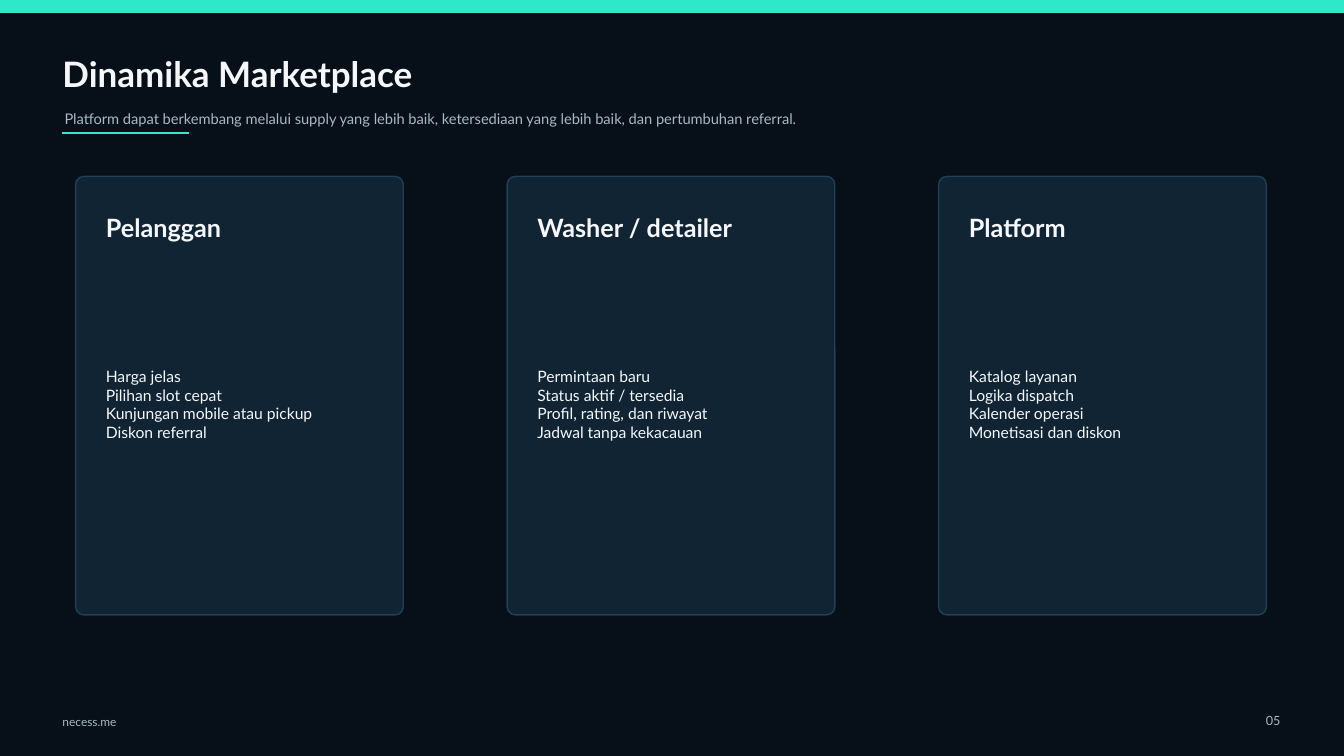
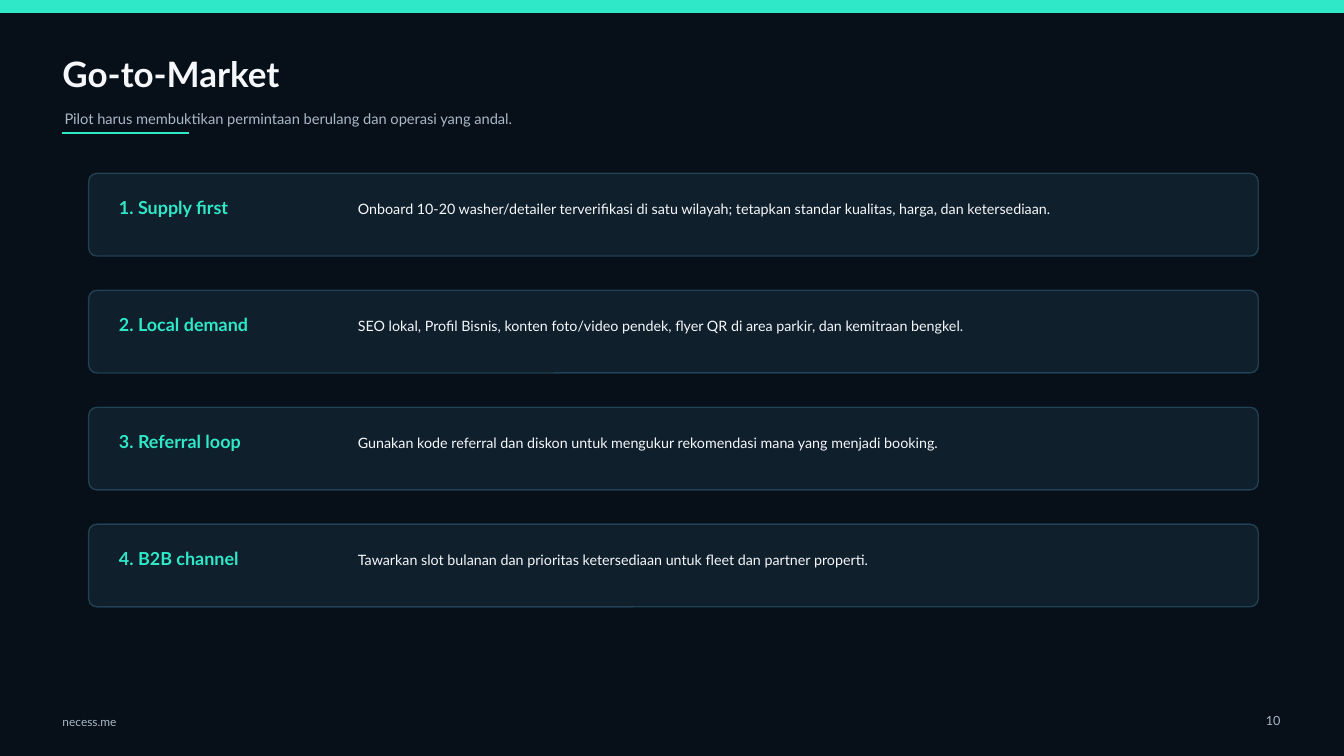
from dataclasses import dataclass

import pptx
import pptx.dml.color
import pptx.enum.shapes
import pptx.enum.text
import pptx.oxml.ns
import pptx.util
from lxml import etree

RGB = pptx.dml.color.RGBColor.from_string
SHAPE = pptx.enum.shapes.MSO_SHAPE
ALIGN = pptx.enum.text.PP_ALIGN
MIDDLE = pptx.enum.text.MSO_ANCHOR.MIDDLE
qn = pptx.oxml.ns.qn

CELL = 0.1
COLS, ROWS = 133.3, 75


@dataclass(frozen=True)
class Theme:
    """Colours, type styles and corner radius shared by the slides."""
    font = "Lato"
    back, accent, edge = "071018", "2EE8C8", "25475C"
    card, row = "102434", "0F1F2C"
    light, muted = "F5F7FA", "A9B7C6"
    edge_alpha = 85
    radius = 0.8
    title = {"size": 25, "color": light, "bold": True}
    subtitle = {"size": 10.5, "color": muted}
    footer = {"size": 8.5, "color": muted}
    number = {"size": 9, "color": muted}
    card_head = {"size": 18, "color": light, "bold": True}
    card_body = {"size": 11.2, "color": light}
    row_head = {"size": 12.8, "color": accent, "bold": True}
    row_body = {"size": 10.2, "color": light}


T = Theme()


@dataclass(frozen=True)
class Box:
    """A rectangle measured in grid columns and rows."""
    x: float
    y: float
    w: float
    h: float

    def inner(self, dx, dy, w, h):
        """Return a box offset from this box's top left corner."""
        return Box(self.x + dx, self.y + dy, w, h)

    def emu(self):
        """Return left, top, width and height as slide lengths."""
        return [cells(v) for v in (self.x, self.y, self.w, self.h)]


PAGE = Box(0, 0, COLS, ROWS)


def cells(n):
    """Convert a number of grid cells to a slide length."""
    return pptx.util.Inches(round(n * CELL, 4))


def add_text(s, box, lines, style, align=ALIGN.LEFT):
    """Add a text box with one paragraph for each line."""
    tf = s.shapes.add_textbox(*box.emu()).text_frame
    frame = {"word_wrap": True, "vertical_anchor": MIDDLE, "margin_left": 0,
             "margin_top": 0, "margin_right": 0, "margin_bottom": 0}
    for name, value in frame.items():
        setattr(tf, name, value)
    tf.text = "\n".join(lines)
    font = {"name": T.font, "size": pptx.util.Pt(style["size"]),
            "bold": style.get("bold", False)}
    for p in tf.paragraphs:
        p.alignment = align
        for r in p.runs:
            for name, value in font.items():
                setattr(r.font, name, value)
            r.font.color.rgb = RGB(style["color"])


def add_block(s, box, kind, fill, line):
    """Add a filled shape with a thin outline and no shadow."""
    sp = s.shapes.add_shape(kind, *box.emu())
    sp.shadow.inherit = False
    sp.fill.solid()
    sp.fill.fore_color.rgb = RGB(fill)
    sp.line.color.rgb = RGB(line)
    sp.line.width = pptx.util.Pt(1)
    return sp


def add_panel(s, box, fill):
    """Add a rounded panel with a translucent edge."""
    sp = add_block(s, box, SHAPE.ROUNDED_RECTANGLE, fill, T.edge)
    sp.adjustments[0] = T.radius / min(box.w, box.h)
    color = next(sp.element.spPr.find(qn("a:ln")).iter(qn("a:srgbClr")))
    etree.SubElement(color, qn("a:alpha"), val=str(T.edge_alpha * 1000))


def add_rule(s, x, y, length):
    """Add the accent rule under the heading."""
    ends = (cells(x), cells(y), cells(x + length), cells(y))
    rule = s.shapes.add_connector(pptx.enum.shapes.MSO_CONNECTOR.STRAIGHT, *ends)
    rule.line.color.rgb = RGB(T.accent)
    rule.line.width = pptx.util.Pt(2)
    etree.SubElement(rule.element.spPr, qn("a:effectLst"))


def add_page(prs, box, title, subtitle, number):
    """Add a slide with its band, heading and footer."""
    s = prs.slides.add_slide(prs.slide_layouts[6])
    add_block(s, box.inner(0, 0, box.w, 1.2), SHAPE.RECTANGLE, T.accent, T.accent)
    add_text(s, box.inner(6.2, 4.5, 88, 5.5), [title], T.title)
    add_text(s, box.inner(6.4, 10, 92, 3.6), [subtitle], T.subtitle)
    add_rule(s, box.x + 6.2, box.y + 13.2, 12.5)
    add_text(s, box.inner(6.2, 70.5, 14, 2.2), ["necess.me"], T.footer)
    add_text(s, box.inner(122.5, 70.2, 4.5, 2.5), [f"{number:02d}"], T.number, ALIGN.RIGHT)
    return s


def add_card(s, box, head, lines):
    """Add a tall card with a heading and a list of lines."""
    add_panel(s, box, T.card)
    add_text(s, box.inner(3, 3.3, 25.5, 3.6), [head], T.card_head)
    add_text(s, box.inner(3, 9.1, 26, 27), lines, T.card_body)


def add_step(s, box, head, body):
    """Add a wide row with a step name and its description."""
    add_panel(s, box, T.row)
    add_text(s, box.inner(3, 2.2, 23.5, 2.4), [head], T.row_head)
    add_text(s, box.inner(26.7, 1.7, 82, 3.6), [body], T.row_body)


def marketplace_slide(prs, box):
    """Build the slide with three cards side by side."""
    s = add_page(prs, box, "Dinamika Marketplace",
                 "Platform dapat berkembang melalui supply yang lebih baik, "
                 "ketersediaan yang lebih baik, dan pertumbuhan referral.", 5)
    cards = {
        "Pelanggan": ["Harga jelas", "Pilihan slot cepat",
                      "Kunjungan mobile atau pickup", "Diskon referral"],
        "Washer / detailer": ["Permintaan baru", "Status aktif / tersedia",
                              "Profil, rating, dan riwayat", "Jadwal tanpa kekacauan"],
        "Platform": ["Katalog layanan", "Logika dispatch",
                     "Kalender operasi", "Monetisasi dan diskon"],
    }
    for i, (head, lines) in enumerate(cards.items()):
        add_card(s, box.inner(7.5 + 42.8 * i, 17.5, 32.5, 43.5), head, lines)


def market_slide(prs, box):
    """Build the slide with four numbered steps."""
    s = add_page(prs, box, "Go-to-Market",
                 "Pilot harus membuktikan permintaan berulang dan operasi yang andal.", 10)
    steps = {
        "Supply first": "Onboard 10-20 washer/detailer terverifikasi di satu wilayah; "
                        "tetapkan standar kualitas, harga, dan ketersediaan.",
        "Local demand": "SEO lokal, Profil Bisnis, konten foto/video pendek, "
                        "flyer QR di area parkir, dan kemitraan bengkel.",
        "Referral loop": "Gunakan kode referral dan diskon untuk mengukur "
                         "rekomendasi mana yang menjadi booking.",
        "B2B channel": "Tawarkan slot bulanan dan prioritas ketersediaan "
                       "untuk fleet dan partner properti.",
    }
    for i, (head, body) in enumerate(steps.items()):
        add_step(s, box.inner(8.8, 17.2 + 11.6 * i, 116, 8.2), f"{i + 1}. {head}", body)


def main():
    """Build and save the presentation."""
    prs = pptx.Presentation()
    prs.slide_width, prs.slide_height = cells(COLS), cells(ROWS)
    fill = prs.slide_master.background.fill
    fill.solid()
    fill.fore_color.rgb = RGB(T.back)
    marketplace_slide(prs, PAGE)
    market_slide(prs, PAGE)
    prs.save("out.pptx")


if __name__ == "__main__":
    main()
